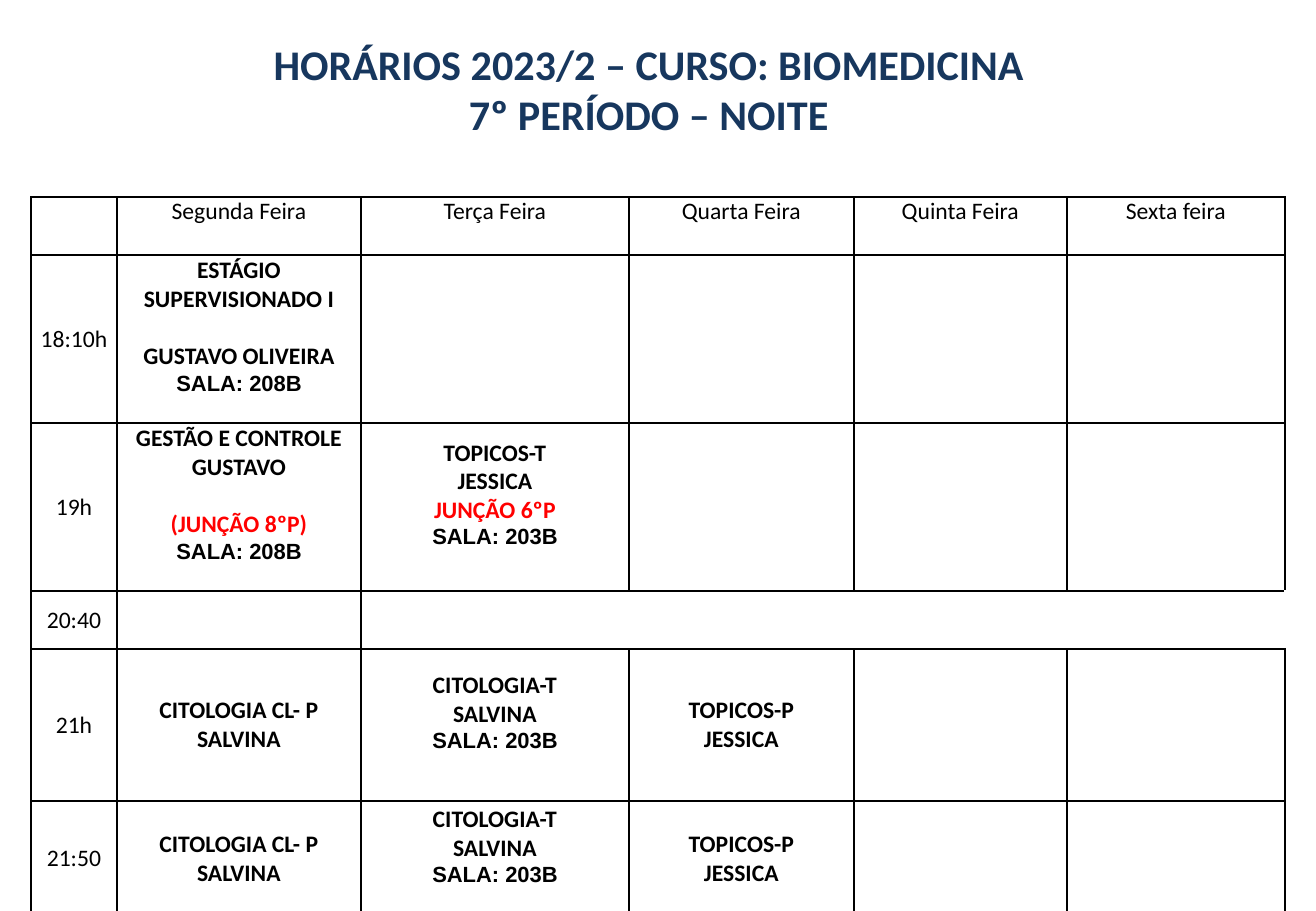
from lxml import etree
from pptx import Presentation
from pptx import util as u
from pptx.dml.color import RGBColor
from pptx.enum import text
from pptx.oxml import ns

TITLE = ["HORÁRIOS 2023/2 – CURSO: BIOMEDICINA", "7º PERÍODO – NOITE"]
DAYS = ["", "Segunda Feira", "Terça Feira", "Quarta Feira", "Quinta Feira", "Sexta feira"]
CITOLOGIA_P = ["CITOLOGIA CL- P", "SALVINA"]
CITOLOGIA_T = ["CITOLOGIA-T", "SALVINA", "SALA: 203B"]
TOPICOS_P = ["TOPICOS-P", "JESSICA"]
# Each hour lists its classes from Monday on
HOURS = [
    ("18:10h", [["ESTÁGIO SUPERVISIONADO I", "GUSTAVO OLIVEIRA", "SALA: 208B"]]),
    ("19h", [["GESTÃO E CONTROLE", "GUSTAVO", "(JUNÇÃO 8ºP)", "SALA: 208B"],
             ["TOPICOS-T", "JESSICA", "JUNÇÃO 6ºP", "SALA: 203B"]]),
    ("20:40", []),
    ("21h", [CITOLOGIA_P, CITOLOGIA_T, TOPICOS_P]),
    ("21:50", [CITOLOGIA_P, CITOLOGIA_T, TOPICOS_P]),
]
SPACED = {"GUSTAVO OLIVEIRA", "(JUNÇÃO 8ºP)"}
COL_WIDTHS = [86, 244, 268, 225, 213, 218]
ROW_HEIGHTS = [58, 168, 168, 58, 152, 116]
BREAK_ROW = 4 - 1
WHITE_COLS = {2, 3}
NAVY, BLACK, RED, WHITE = "17375E", "000000", "FF0000", "FFFFFF"


def px(n):
    return u.Emu(round(n * 914400 / 121.5))


def color(value):
    return RGBColor.from_string(value)


def write(tf, line, first=False, size=14, font="Calibri", fill=BLACK, bold=False, before=0):
    p = tf.paragraphs[0] if first else tf.add_paragraph()
    p.alignment = text.PP_ALIGN.CENTER
    if before:
        p.space_before = u.Pt(before)
    r = p.add_run()
    r.text = line
    r.font.size, r.font.name, r.font.bold = u.Pt(size), font, bold
    r.font.color.rgb = color(fill)


def write_class(cell, lines):
    """Write a class with its room in Arial and its joint group in red."""
    for i, line in enumerate(lines):
        room = line.startswith("SALA")
        write(cell.text_frame, line, first=i == 0, bold=True,
              size=13 if room else 14, font="Arial" if room else "Calibri",
              fill=RED if "JUNÇÃO" in line else BLACK,
              before=17 if line in SPACED else 0)
    if lines[-1].startswith("SALA"):
        cell.margin_bottom = px(26)


def style_cell(cell, fill, sides):
    cell.margin_left = cell.margin_right = px(6)
    cell.margin_top = cell.margin_bottom = 0
    tc_pr = cell._tc.get_or_add_tcPr()
    for side in sides:
        ln = etree.SubElement(tc_pr, ns.qn("a:ln" + side), w=str(u.Pt(1)))
        solid = etree.SubElement(ln, ns.qn("a:solidFill"))
        etree.SubElement(solid, ns.qn("a:srgbClr"), val=BLACK)
    if fill:
        cell.fill.solid()
        cell.fill.fore_color.rgb = color(fill)
    else:
        cell.fill.background()


prs = Presentation()
prs.slide_width, prs.slide_height = px(1316), px(911)
slide = prs.slides.add_slide(prs.slide_layouts[6])

title = slide.shapes.add_textbox(px(36), px(30), px(1225), px(114))
tf = title.text_frame
tf.word_wrap = True
tf.margin_top = px(8)
for i, line in enumerate(TITLE):
    write(tf, line, first=i == 0, size=25, fill=NAVY, bold=True)

table = slide.shapes.add_table(len(ROW_HEIGHTS), len(COL_WIDTHS), px(31), px(197),
                               px(sum(COL_WIDTHS)), px(sum(ROW_HEIGHTS))).table
table.first_row = table.horz_banding = False
for col, width in zip(table.columns, COL_WIDTHS):
    col.width = px(width)
for row, height in zip(table.rows, ROW_HEIGHTS):
    row.height = px(height)

last = len(COL_WIDTHS) - 1
table.cell(BREAK_ROW, 2).merge(table.cell(BREAK_ROW, last))
for r in range(len(ROW_HEIGHTS)):
    for c in range(len(COL_WIDTHS)):
        cell = table.cell(r, c)
        left = "" if cell.is_spanned else "L"
        right = "" if r == BREAK_ROW and 2 <= c < last else "R"
        style_cell(cell, WHITE if c in WHITE_COLS else None, left + right + "TB")

for c, day in enumerate(DAYS):
    if day:
        write(table.cell(0, c).text_frame, day, first=True)
for r, (hour, classes) in enumerate(HOURS, 1):
    write(table.cell(r, 0).text_frame, hour, first=True)
    table.cell(r, 0).vertical_anchor = text.MSO_ANCHOR.MIDDLE
    for c, lines in enumerate(classes, 1):
        write_class(table.cell(r, c), lines)
        table.cell(r, c).vertical_anchor = text.MSO_ANCHOR.MIDDLE

prs.save("out.pptx")
